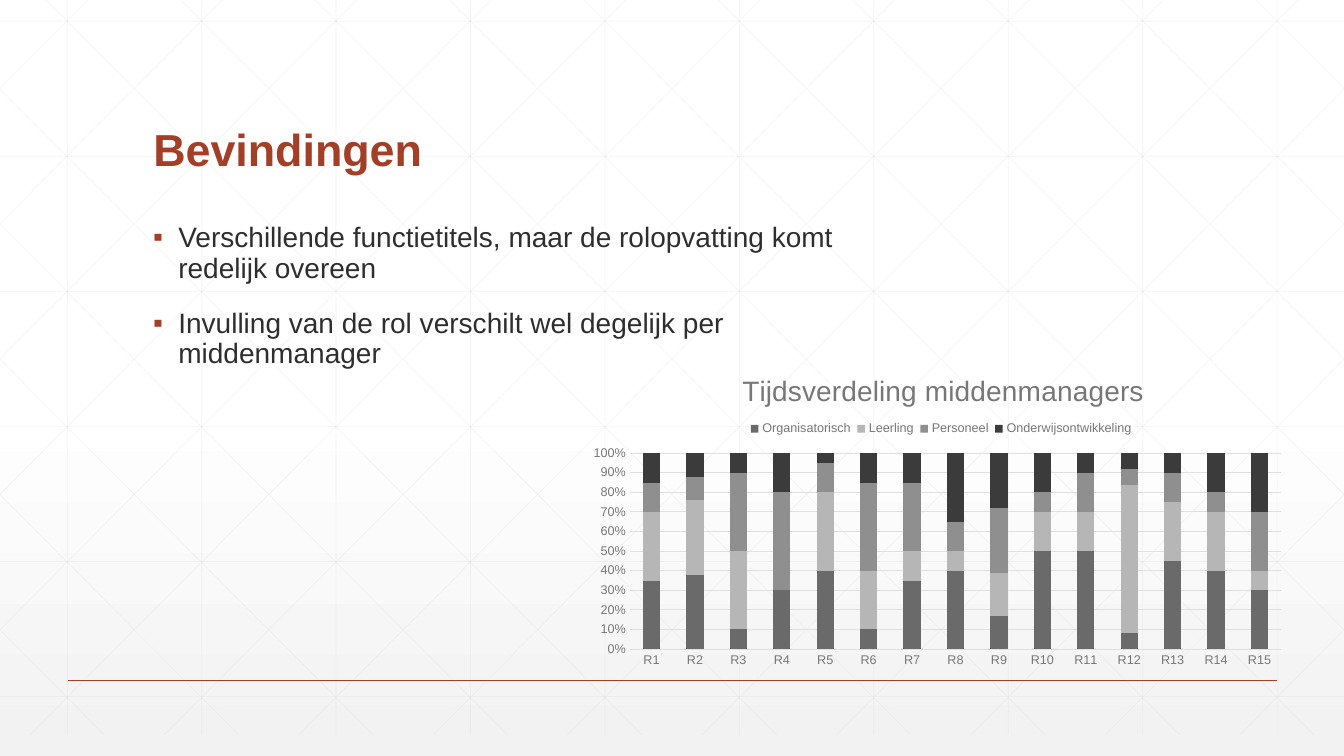
"""Build the slide 'Bevindingen' with two findings and a chart of time use per manager."""
import pptx
import pptx.chart.data
import pptx.dml.color
import pptx.enum.chart
import pptx.enum.shapes
import pptx.enum.text
import pptx.oxml
import pptx.oxml.ns
import pptx.util
from lxml import etree
from pptx.util import Inches

TITLE = "Bevindingen"
FINDINGS = [
    "Verschillende functietitels, maar de rolopvatting komt redelijk overeen",
    "Invulling van de rol verschilt wel degelijk per middenmanager",
]
CHART_TITLE = "Tijdsverdeling middenmanagers"
MANAGERS = [f"R{number}" for number in range(1, 16)]
SERIES = [
    ("Organisatorisch", "organisation", [35, 38, 10, 30, 40, 10, 35, 40, 17, 50, 50, 8, 45, 40, 30]),
    ("Leerling", "pupil", [35, 38, 40, None, 40, 30, 15, 10, 22, 20, 20, 76, 30, 30, 10]),
    ("Personeel", "staff", [15, 12, 40, 50, 15, 45, 35, 15, 33, 10, 20, 8, 15, 10, 30]),
    ("Onderwijsontwikkeling", "development", [15, 12, 10, 20, 5, 15, 15, 35, 28, 20, 10, 8, 10, 20, 30]),
]
COLORS = {
    "white": "FFFFFF", "haze": "F2F2F2", "lattice": "D9D9D9", "accent": "A43F27",
    "text": "2D2E2D", "muted": "767876", "grid": "DFE0DF",
    "organisation": "6A6A6A", "pupil": "B6B6B6", "staff": "8F8F8F", "development": "3A3B3A",
}
WIDTH, HEIGHT = 13.33, 7.5
TOP, BOTTOM = -0.21, 7.29
STEP = 4 / 3
DIAGONAL_START, DIAGONAL_RUN = 0.25, 7.45
LAYOUTS = {
    "title": {"x": 0.22, "y": 0.06},
    "legend": {"x": 0.23, "y": 0.21, "w": 0.55, "h": 0.07},
    "plot": {"x": 0.07, "y": 0.32, "w": 0.91, "h": 0.6},
}


def color(name):
    return pptx.dml.color.RGBColor.from_string(COLORS[name])


def set_values(target, values):
    for name, value in values.items():
        setattr(target, name, value)


def set_font(font, size, color_name, bold=False):
    set_values(font, {"name": "Arial", "size": pptx.util.Pt(size), "bold": bold})
    font.color.rgb = color(color_name)


def set_line(line, color_name, width):
    line.color.rgb = color(color_name)
    line.width = pptx.util.Pt(width)


def add_line(slide, start, end, color_name, width, opacity=None):
    connector = slide.shapes.add_connector(
        pptx.enum.shapes.MSO_CONNECTOR.STRAIGHT, *(Inches(value) for value in (*start, *end)))
    set_line(connector.line, color_name, width)
    properties = connector.element.spPr
    etree.SubElement(properties, pptx.oxml.ns.qn("a:effectLst"))
    if opacity:
        solid_color = properties.xpath(".//a:srgbClr")[0]
        etree.SubElement(solid_color, pptx.oxml.ns.qn("a:alpha"), val=str(opacity * 1000))


def lattice_lines():
    for column in range(10):
        x = STEP * (column + 0.5)
        yield (x, TOP), (x, BOTTOM)
    for row in range(6):
        y = 0.21 + 1.34 * row
        yield (0, y), (WIDTH, y)
    slope = (BOTTOM - TOP) / DIAGONAL_RUN
    for index in range(-5, 10):
        x = DIAGONAL_START + STEP * index
        left, right = max(x, 0), min(x + DIAGONAL_RUN, WIDTH)
        upper, lower = TOP + (left - x) * slope, TOP + (right - x) * slope
        yield (left, upper), (right, lower)
        yield (WIDTH - left, upper), (WIDTH - right, lower)


def add_background(slide):
    fill = slide.background.fill
    fill.gradient()
    fill.gradient_angle = 270
    for stop, position, name in zip(fill.gradient_stops, (0.53, 1), ("white", "haze")):
        stop.position = position
        stop.color.rgb = color(name)
    for start, end in lattice_lines():
        add_line(slide, start, end, "lattice", 0.5, 25)
    add_line(slide, (0.67, 6.75), (12.67, 6.75), "accent", 1)


def add_title(slide):
    title = slide.shapes.title
    title.element.getparent().append(title.element)
    set_values(title, {"left": Inches(1.42), "top": Inches(0.55),
                       "width": Inches(10.5), "height": Inches(1.25)})
    title.text_frame.text = TITLE
    title.text_frame.vertical_anchor = pptx.enum.text.MSO_ANCHOR.BOTTOM
    paragraph = title.text_frame.paragraphs[0]
    set_values(paragraph, {"alignment": pptx.enum.text.PP_ALIGN.LEFT, "line_spacing": 0.9})
    set_font(paragraph.font, 32, "accent", True)


def add_findings(slide):
    box = slide.shapes.add_textbox(Inches(1.42), Inches(2.17), Inches(7.48), Inches(4.17))
    frame = box.text_frame
    frame.word_wrap = True
    for index, finding in enumerate(FINDINGS):
        paragraph = frame.add_paragraph() if index else frame.paragraphs[0]
        paragraph.text = finding
        paragraph.line_spacing = 0.9
        paragraph.space_before = pptx.util.Pt(18 if index else 0)
        properties = paragraph._p.get_or_add_pPr()
        properties.set("marL", str(Inches(0.25)))
        properties.set("indent", str(Inches(-0.25)))
        bullet_color = etree.SubElement(properties, pptx.oxml.ns.qn("a:buClr"))
        etree.SubElement(bullet_color, pptx.oxml.ns.qn("a:srgbClr"), val=COLORS["accent"])
        etree.SubElement(properties, pptx.oxml.ns.qn("a:buFont"), typeface="Arial")
        etree.SubElement(properties, pptx.oxml.ns.qn("a:buChar"), char="▪")
        set_font(paragraph.font, 20, "text")


def place(element, anchor, part):
    """Give a chart part a fixed place, right after the anchor or first in the element."""
    for old in element.xpath("./c:layout"):
        element.remove(old)
    layout = etree.Element(pptx.oxml.ns.qn("c:layout"))
    manual = etree.SubElement(layout, pptx.oxml.ns.qn("c:manualLayout"))
    if part == "plot":
        etree.SubElement(manual, pptx.oxml.ns.qn("c:layoutTarget"), val="inner")
    for axis in "xy":
        etree.SubElement(manual, pptx.oxml.ns.qn(f"c:{axis}Mode"), val="edge")
    for name, value in LAYOUTS[part].items():
        etree.SubElement(manual, pptx.oxml.ns.qn(f"c:{name}"), val=str(value))
    if anchor:
        element.xpath(anchor)[0].addnext(layout)
    else:
        element.insert(0, layout)


def add_time_chart(slide):
    data = pptx.chart.data.CategoryChartData()
    data.categories = MANAGERS
    for name, _, values in SERIES:
        data.add_series(name, values)
    chart = slide.shapes.add_chart(
        pptx.enum.chart.XL_CHART_TYPE.COLUMN_STACKED_100,
        Inches(5.75), Inches(3.46), Inches(7.1), Inches(3.24), data).chart
    set_font(chart.font, 10, "text")
    chart.has_title = True
    chart.chart_title.text_frame.text = CHART_TITLE
    set_font(chart.chart_title.text_frame.paragraphs[0].runs[0].font, 20, "muted")
    chart.has_legend = True
    set_values(chart.legend, {"position": pptx.enum.chart.XL_LEGEND_POSITION.TOP,
                              "include_in_layout": False})
    set_font(chart.legend.font, 9, "muted")
    plot = chart.plots[0]
    set_values(plot, {"gap_width": 150, "overlap": 100, "vary_by_categories": False})
    for series, (_, color_name, _) in zip(plot.series, SERIES):
        series.format.fill.solid()
        series.format.fill.fore_color.rgb = color(color_name)
    for axis in (chart.category_axis, chart.value_axis):
        set_values(axis, {"major_tick_mark": pptx.enum.chart.XL_TICK_MARK.NONE,
                          "minor_tick_mark": pptx.enum.chart.XL_TICK_MARK.NONE})
        set_font(axis.tick_labels.font, 9, "muted")
    set_line(chart.category_axis.format.line, "grid", 0.75)
    value_axis = chart.value_axis
    set_values(value_axis, {"minimum_scale": 0, "maximum_scale": 1, "major_unit": 0.1,
                            "has_major_gridlines": True})
    set_values(value_axis.tick_labels, {"number_format": "0%", "number_format_is_linked": False})
    value_axis.format.line.fill.background()
    set_line(value_axis.major_gridlines.format.line, "grid", 0.75)
    root = chart.element
    place(root.xpath("./c:chart/c:title")[0], "./c:tx", "title")
    place(root.xpath(".//c:legend")[0], "./c:legendPos", "legend")
    place(root.xpath(".//c:plotArea")[0], None, "plot")


def main():
    presentation = pptx.Presentation()
    set_values(presentation, {"slide_width": Inches(WIDTH), "slide_height": Inches(HEIGHT)})
    slide = presentation.slides.add_slide(presentation.slide_layouts[5])
    add_background(slide)
    add_title(slide)
    add_findings(slide)
    add_time_chart(slide)
    presentation.save("out.pptx")


if __name__ == "__main__":
    main()
